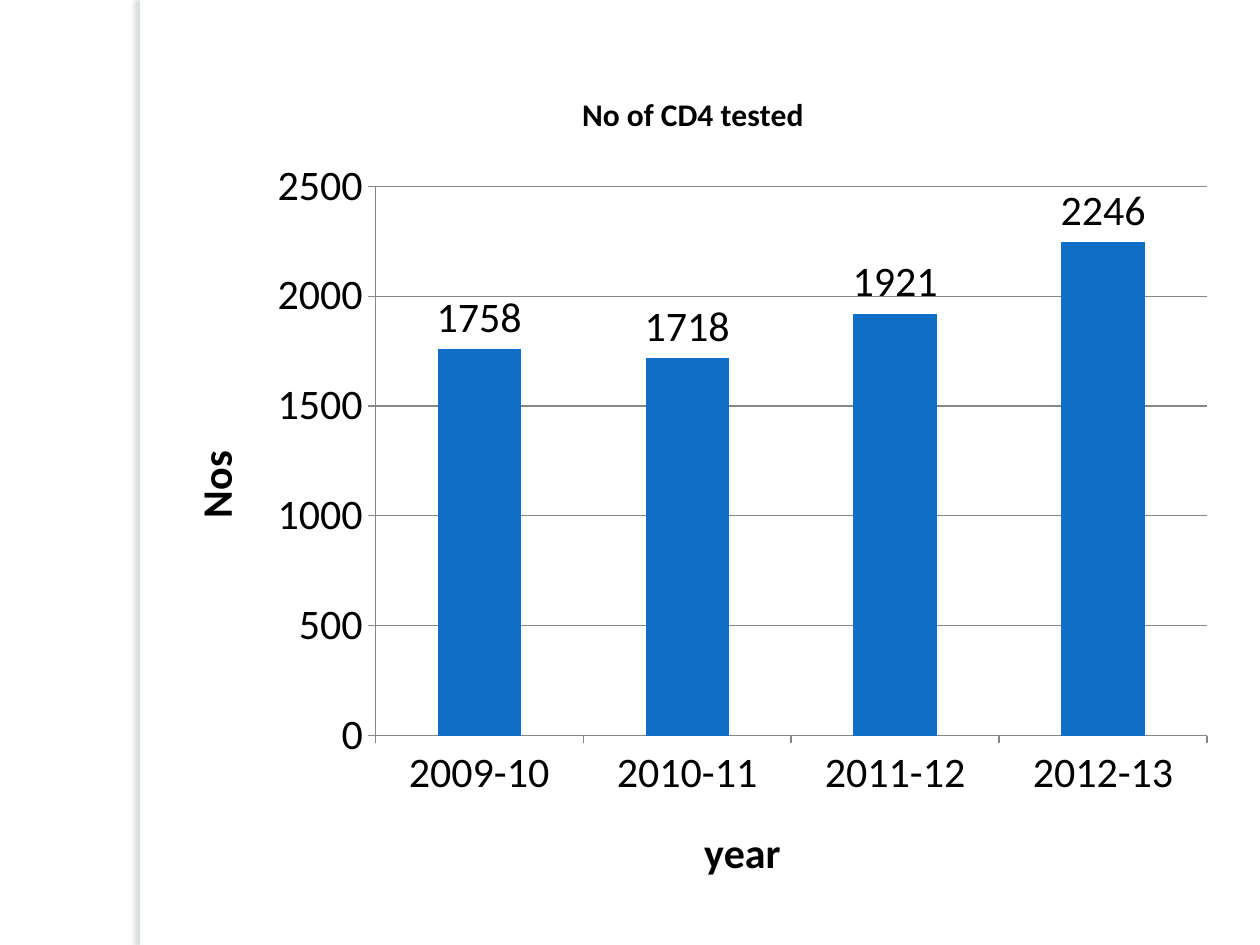
from lxml import etree
from pptx import Presentation
from pptx.chart.data import CategoryChartData
from pptx.dml.color import RGBColor
from pptx.enum.chart import XL_CHART_TYPE as ChartType
from pptx.enum.chart import XL_LABEL_POSITION as LabelPosition
from pptx.enum.chart import XL_TICK_MARK as TickMark
from pptx.enum.shapes import MSO_SHAPE as Shape
from pptx.oxml import parse_xml
from pptx.oxml.ns import nsdecls
from pptx.util import Inches, Pt

WHITE = RGBColor(0xFF, 0xFF, 0xFF)
BLACK = RGBColor(0x00, 0x00, 0x00)
BLUE = RGBColor(0x0F, 0x6F, 0xC6)
GRAY = RGBColor(0x86, 0x86, 0x86)
FONT = "Calibri"

TESTS_BY_YEAR = {"2009-10": 1758, "2010-11": 1718, "2011-12": 1921, "2012-13": 2246}


def style_font(font, size, bold=False):
    font.name = FONT
    font.size = Pt(size)
    font.bold = bold
    font.color.rgb = BLACK


def set_title(titled, text, size):
    """Give a chart or an axis its bold title."""
    frame = (titled.chart_title if hasattr(titled, "chart_title") else titled.axis_title).text_frame
    frame.text = text
    style_font(frame.paragraphs[0].font, size, bold=True)


def add_side_strip(slide, left, top, width, height):
    """White strip whose soft shadow falls to the left."""
    strip = slide.shapes.add_shape(Shape.RECTANGLE, left, top, width, height)
    strip.fill.solid()
    strip.fill.fore_color.rgb = WHITE
    strip.line.fill.background()
    strip.shadow.inherit = False
    effects = strip.element.spPr.find("{*}effectLst")
    effects.append(parse_xml(
        f'<a:outerShdw {nsdecls("a")} blurRad="{Pt(3)}" dist="{Pt(3)}" dir="10800000" '
        'algn="tl" rotWithShape="0"><a:srgbClr val="6C7A7C"><a:alpha val="25000"/>'
        '</a:srgbClr></a:outerShdw>'))


def style_axis(axis, title):
    set_title(axis, title, 24)
    style_font(axis.tick_labels.font, 24)
    axis.major_tick_mark = TickMark.OUTSIDE
    axis.minor_tick_mark = TickMark.NONE
    axis.format.line.color.rgb = GRAY
    axis.format.line.width = Pt(0.75)


def add_tests_chart(slide, left, top, width, height):
    """Column chart of the CD4 tests in each year."""
    tests = CategoryChartData()
    tests.categories = list(TESTS_BY_YEAR)
    tests.add_series("No of CD4 tested", list(TESTS_BY_YEAR.values()))
    chart = slide.shapes.add_chart(
        ChartType.COLUMN_CLUSTERED, left, top, width, height, tests).chart
    style_font(chart.font, 10)
    chart.has_legend = False
    set_title(chart, "No of CD4 tested", 18)
    chart.chart_title.include_in_layout = False

    # Axes and gridlines
    style_axis(chart.category_axis, "year")
    style_axis(chart.value_axis, "Nos ")
    chart.value_axis.has_major_gridlines = True
    gridline = chart.value_axis.major_gridlines.format.line
    gridline.color.rgb = GRAY
    gridline.width = Pt(0.75)

    # Columns and their values
    plot = chart.plots[0]
    plot.gap_width = 150
    plot.vary_by_categories = False
    columns = plot.series[0]
    columns.format.fill.solid()
    columns.format.fill.fore_color.rgb = BLUE
    values = columns.data_labels
    values.show_value = True
    values.position = LabelPosition.OUTSIDE_END
    style_font(values.font, 24)


def main():
    deck = Presentation()
    deck.slide_width, deck.slide_height = Inches(10), Inches(7.5)
    slide = deck.slides.add_slide(deck.slide_layouts[6])
    slide.background.fill.solid()
    slide.background.fill.fore_color.rgb = WHITE
    add_side_strip(slide, Inches(1.11), Inches(0), Inches(0.08), deck.slide_height)
    add_tests_chart(slide, Inches(1.25), Inches(0.5), Inches(8.5), Inches(6.75))
    deck.save("out.pptx")


if __name__ == "__main__":
    main()
